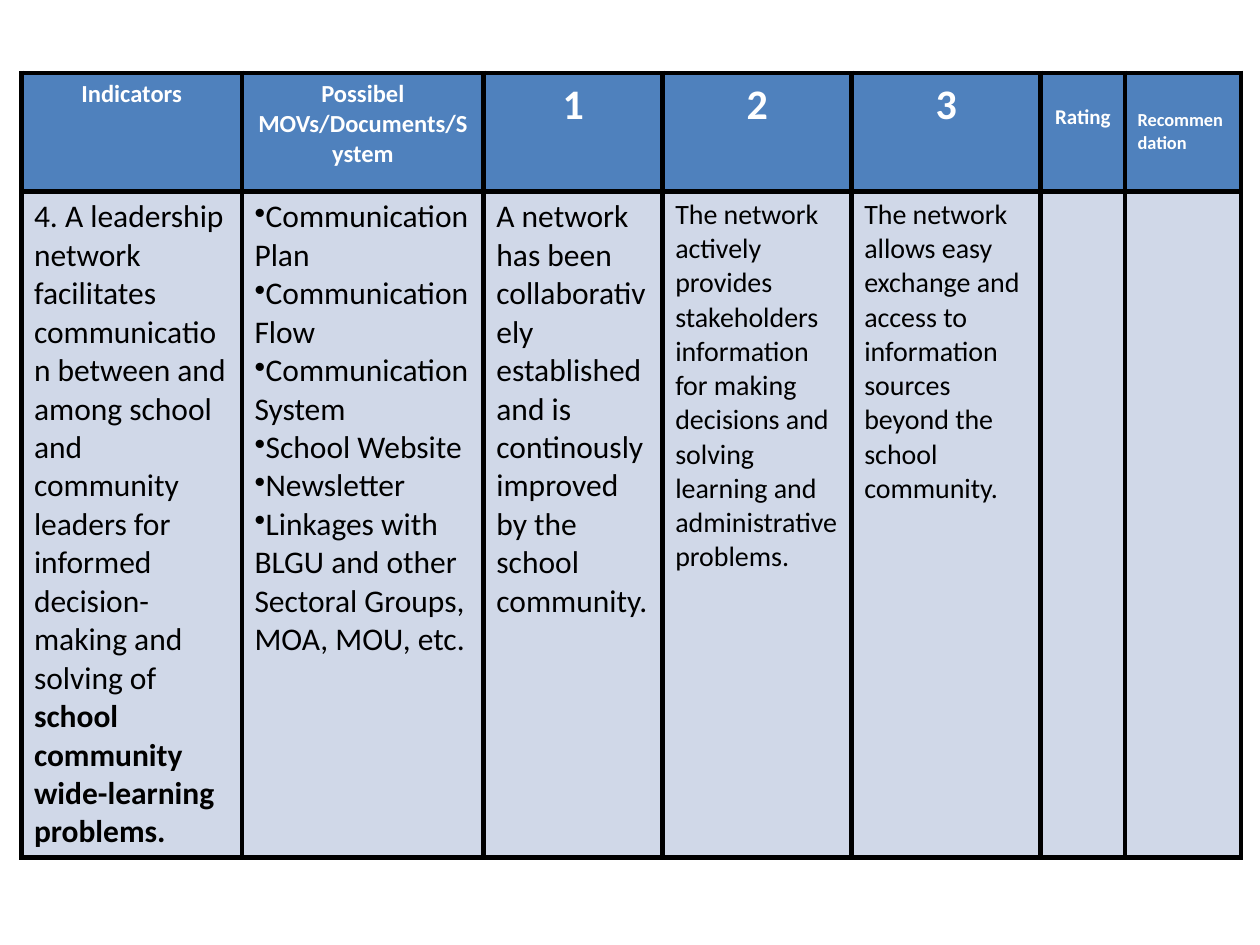
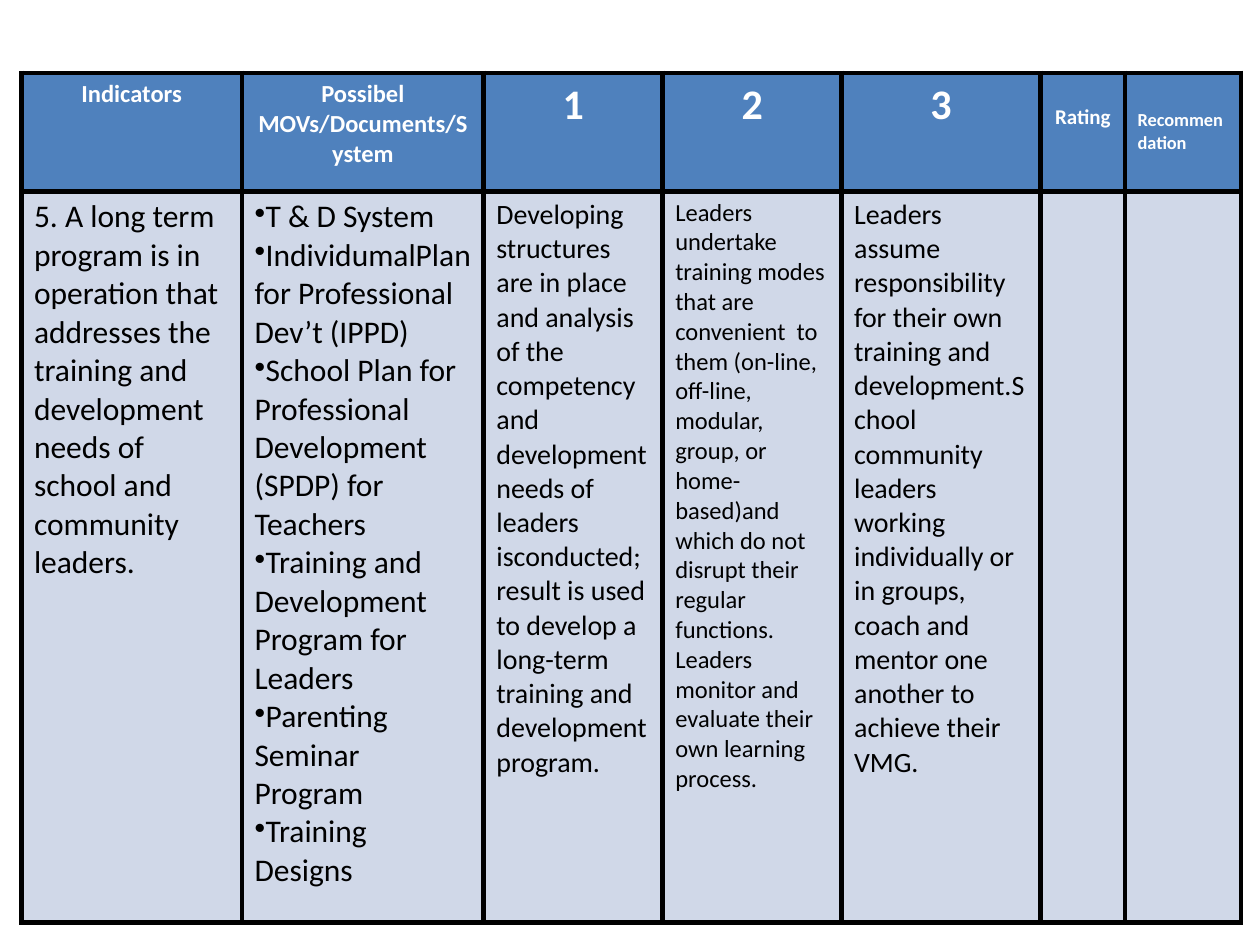
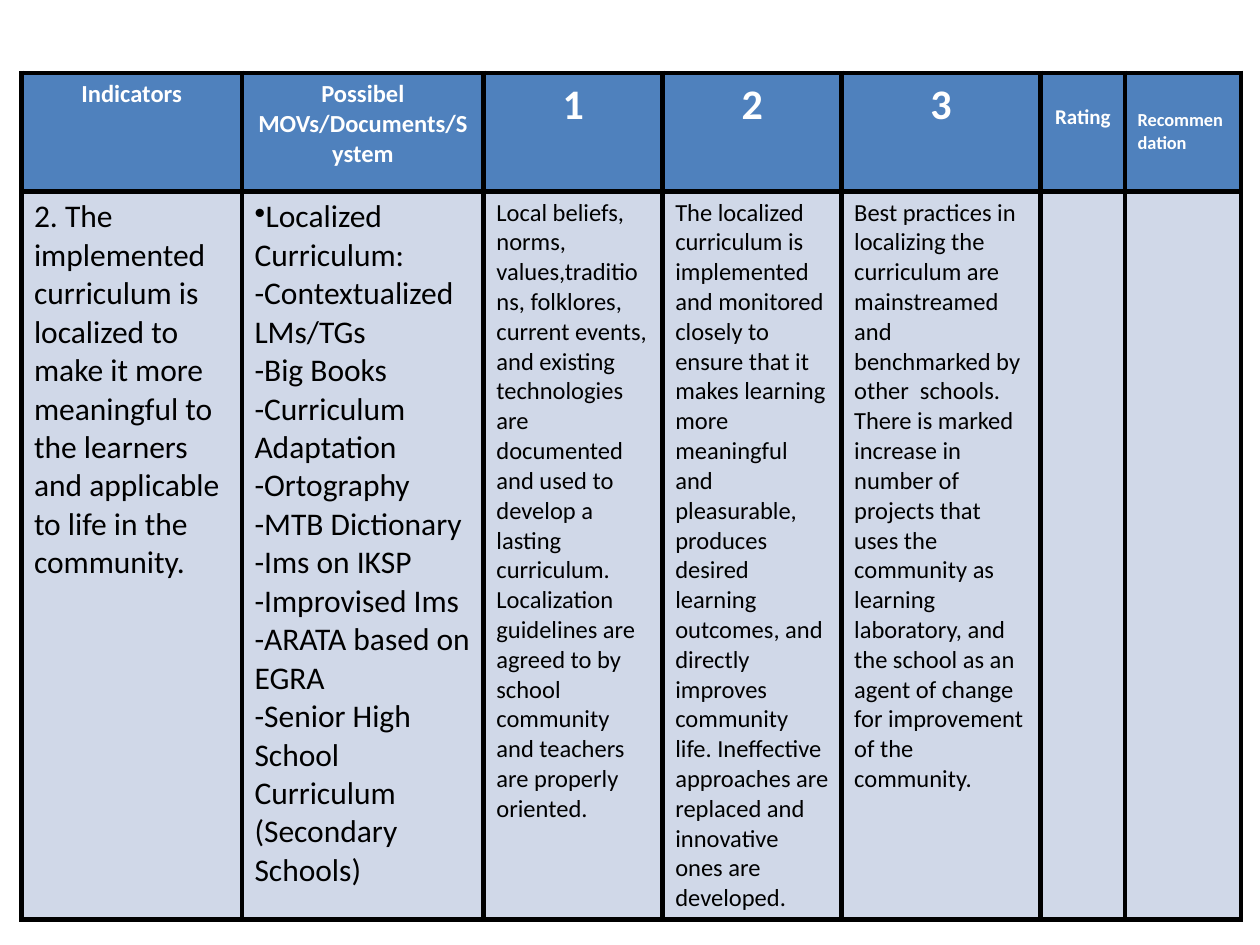
from dataclasses import dataclass

from lxml import etree
from pptx import Presentation
from pptx.dml.color import RGBColor
from pptx.enum.text import PP_ALIGN
from pptx.oxml.ns import qn
from pptx.util import Inches, Pt

CENTER, LEFT = PP_ALIGN.CENTER, PP_ALIGN.LEFT
BLANK_LAYOUT = 6
BULLET = "•"


@dataclass(frozen=True)
class Theme:
    font: str = "Calibri"
    header_fill: str = "4F81BD"
    header_text: str = "FFFFFF"
    body_fill: str = "D0D8E8"
    body_text: str = "000000"
    border: str = "000000"
    border_width: float = 3
    large: float = 18
    medium: float = 16
    small: float = 14


@dataclass(frozen=True)
class Entry:
    """The content of one body cell."""
    lines: tuple
    size: float
    bold_tail: str = ""


@dataclass(frozen=True)
class Box:
    left: float
    top: float
    width: float
    height: float


THEME = Theme()
HEADER_HEIGHT = 0.94
TABLE_LEFT, TABLE_TOP = 0.17, 0.58

# Header cells: text, size, alignment, top margin
HEADERS = (
    ("Indicators", 14, CENTER, 0.05),
    ("Possibel MOVs/Documents/System", 14, CENTER, 0.05),
    ("1", 24, CENTER, 0.05),
    ("2", 24, CENTER, 0.05),
    ("3", 24, CENTER, 0.05),
    ("Rating", 12, CENTER, 0.25),
    ("Recommendation", 10.5, LEFT, 0.29),
)

EQUAL_LEVELS = (1.75, 1.92, 1.42, 1.5, 1.5, 0.67, 0.92)
WIDE_LAST_LEVEL = (1.75, 1.92, 1.42, 1.42, 1.58, 0.67, 0.92)

# Each page: column widths, table height, body entries
PAGES = (
    (EQUAL_LEVELS, 6.14, (
        Entry(("4. A leadership network facilitates communication between and "
               "among school and community leaders for informed "
               "decision-making and solving of ",), THEME.large,
              "school community wide-learning problems."),
        Entry(("•Communication Plan", "•Communication Flow",
               "•Communication System", "•School Website", "•Newsletter",
               "•Linkages with BLGU and other Sectoral Groups, MOA, MOU, etc."),
              THEME.large),
        Entry(("A network has been collaboratively established and is "
               "continously improved by the school community.",), THEME.large),
        Entry(("The network actively provides stakeholders information for "
               "making decisions and solving learning and administrative "
               "problems.",), THEME.medium),
        Entry(("The network allows easy exchange and access to information "
               "sources beyond the school community.",), THEME.medium),
    )),
    (WIDE_LAST_LEVEL, 6.74, (
        Entry(("5. A long term program is in operation that addresses the "
               "training and development needs of school and community "
               "leaders.",), THEME.large),
        Entry(("•T & D System",
               "•IndividumalPlan for Professional Dev’t (IPPD)",
               "•School Plan for Professional Development (SPDP) for Teachers",
               "•Training and Development Program for Leaders",
               "•Parenting Seminar Program", "•Training Designs"),
              THEME.large),
        Entry(("Developing structures are in place and analysis of the "
               "competency and development needs of leaders isconducted; "
               "result is used to develop a long-term training and "
               "development program.",), THEME.medium),
        Entry(("Leaders undertake training modes that are convenient  to them "
               "(on-line, off-line, modular, group, or home-based)and which "
               "do not disrupt their regular functions. Leaders monitor and "
               "evaluate their own learning process.",), THEME.small),
        Entry(("Leaders assume responsibility for their own training and "
               "development.School community leaders working individually or "
               "in groups, coach and mentor one another to achieve their "
               "VMG.",), THEME.medium),
    )),
    (WIDE_LAST_LEVEL, 6.64, (
        Entry(("2. The implemented curriculum is localized to make it more "
               "meaningful to the learners and applicable to life in the "
               "community.",), THEME.large),
        Entry(("•Localized Curriculum:", "-Contextualized LMs/TGs",
               "-Big Books", "-Curriculum Adaptation", "-Ortography",
               "-MTB Dictionary", "-Ims on IKSP", "-Improvised Ims",
               "-ARATA based on EGRA",
               "-Senior High School Curriculum (Secondary Schools)"),
              THEME.large),
        Entry(("Local beliefs, norms, values,traditions, folklores, current "
               "events, and existing technologies are documented and used to "
               "develop a lasting curriculum. Localization guidelines are "
               "agreed to by school community and teachers are properly "
               "oriented.",), THEME.small),
        Entry(("The localized curriculum is implemented and monitored closely "
               "to ensure that it makes learning more meaningful and "
               "pleasurable, produces desired learning outcomes, and directly "
               "improves community life. Ineffective approaches are replaced "
               "and innovative ones are developed.",), THEME.small),
        Entry(("Best practices in localizing the curriculum are mainstreamed "
               "and benchmarked by other  schools. There is marked increase "
               "in number of projects that uses the community as learning "
               "laboratory, and the school as an agent of change for "
               "improvement of the community.",), THEME.small),
    )),
)


def style_cell(cell, fill):
    """Give a cell its four borders and its fill."""
    properties = cell._tc.get_or_add_tcPr()
    for side in ("a:lnL", "a:lnR", "a:lnT", "a:lnB"):
        line = etree.SubElement(properties, qn(side),
                                w=str(Pt(THEME.border_width)))
        solid = etree.SubElement(line, qn("a:solidFill"))
        etree.SubElement(solid, qn("a:srgbClr"), val=THEME.border)
    cell.fill.solid()
    cell.fill.fore_color.rgb = RGBColor.from_string(fill)


def style_span(span, size, color, bold):
    span.font.name = THEME.font
    span.font.size = Pt(size)
    span.font.bold = bold
    span.font.color.rgb = RGBColor.from_string(color)


def add_bullet(para):
    properties = para._p.get_or_add_pPr()
    properties.set("marL", "0")
    properties.set("indent", "0")
    etree.SubElement(properties, qn("a:buChar"), char=BULLET)


def fill_header(cell, text, size, alignment, top_margin):
    style_cell(cell, THEME.header_fill)
    cell.margin_top = Inches(top_margin)
    para = cell.text_frame.paragraphs[0]
    para.text = text
    para.alignment = alignment
    style_span(para.runs[0], size, THEME.header_text, True)


def fill_body(cell, entry):
    frame = cell.text_frame
    frame.text = "\n".join(line.removeprefix(BULLET) for line in entry.lines)
    for para, line in zip(frame.paragraphs, entry.lines):
        style_span(para.runs[0], entry.size, THEME.body_text, False)
        if line.startswith(BULLET):
            add_bullet(para)
    if entry.bold_tail:
        span = frame.paragraphs[-1].add_run()
        span.text = entry.bold_tail
        style_span(span, entry.size, THEME.body_text, True)


def add_rubric(page, box, widths, entries):
    """Place the rating table in the given box."""
    table = page.shapes.add_table(
        2, len(widths), Inches(box.left), Inches(box.top),
        Inches(box.width), Inches(box.height)).table
    for column, width in zip(table.columns, widths):
        column.width = Inches(width)
    table.rows[0].height = Inches(HEADER_HEIGHT)
    table.rows[1].height = Inches(box.height - HEADER_HEIGHT)

    # Header row
    for cell, header in zip(table.rows[0].cells, HEADERS):
        fill_header(cell, *header)

    # Body row; rating and recommendation stay empty
    for cell in table.rows[1].cells:
        style_cell(cell, THEME.body_fill)
    for cell, entry in zip(table.rows[1].cells, entries):
        fill_body(cell, entry)


def main():
    deck = Presentation()
    deck.slide_width, deck.slide_height = Inches(10), Inches(7.5)
    for widths, height, entries in PAGES:
        page = deck.slides.add_slide(deck.slide_layouts[BLANK_LAYOUT])
        box = Box(TABLE_LEFT, TABLE_TOP, sum(widths), height)
        add_rubric(page, box, widths, entries)
    deck.save("out.pptx")


if __name__ == "__main__":
    main()
